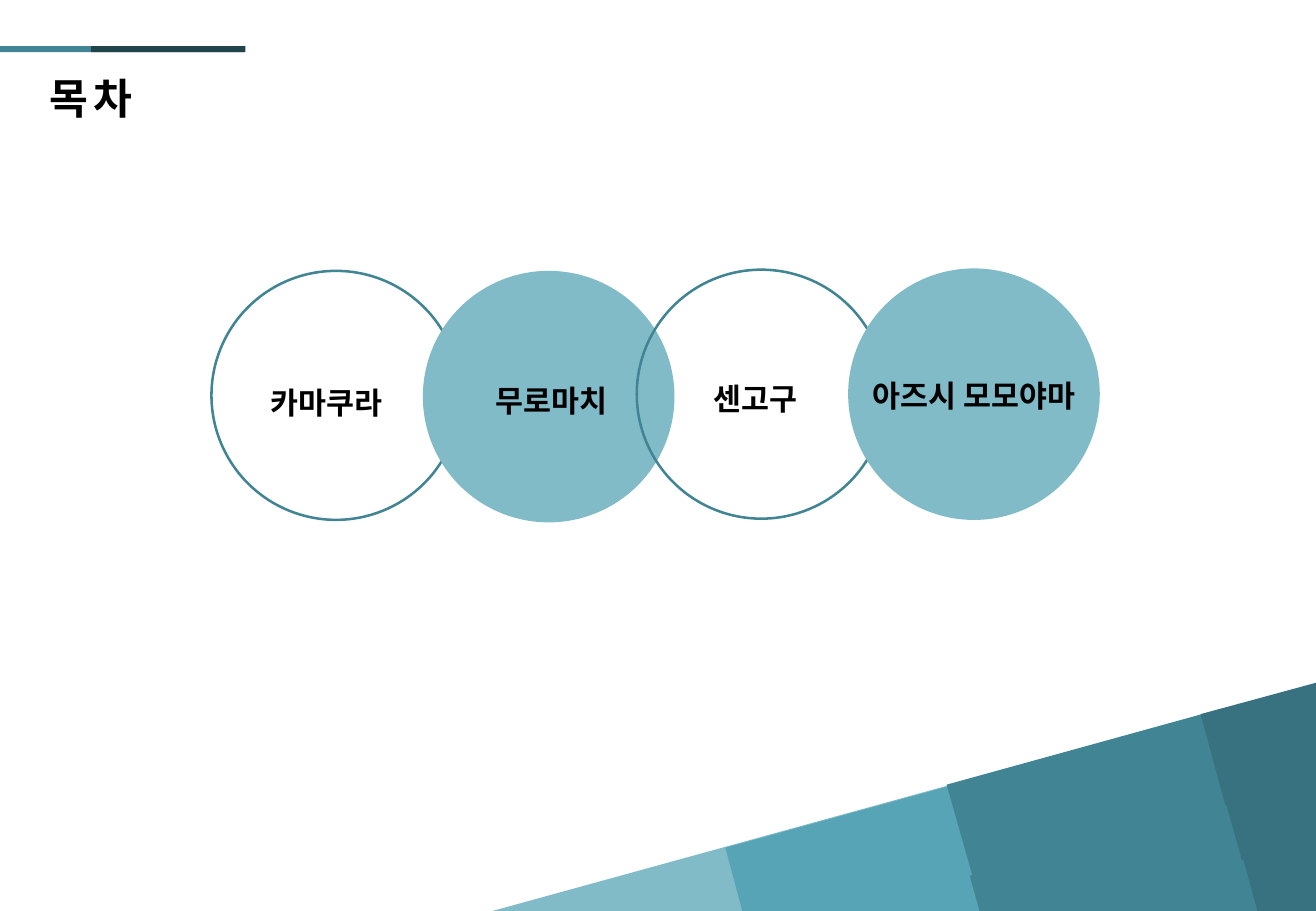
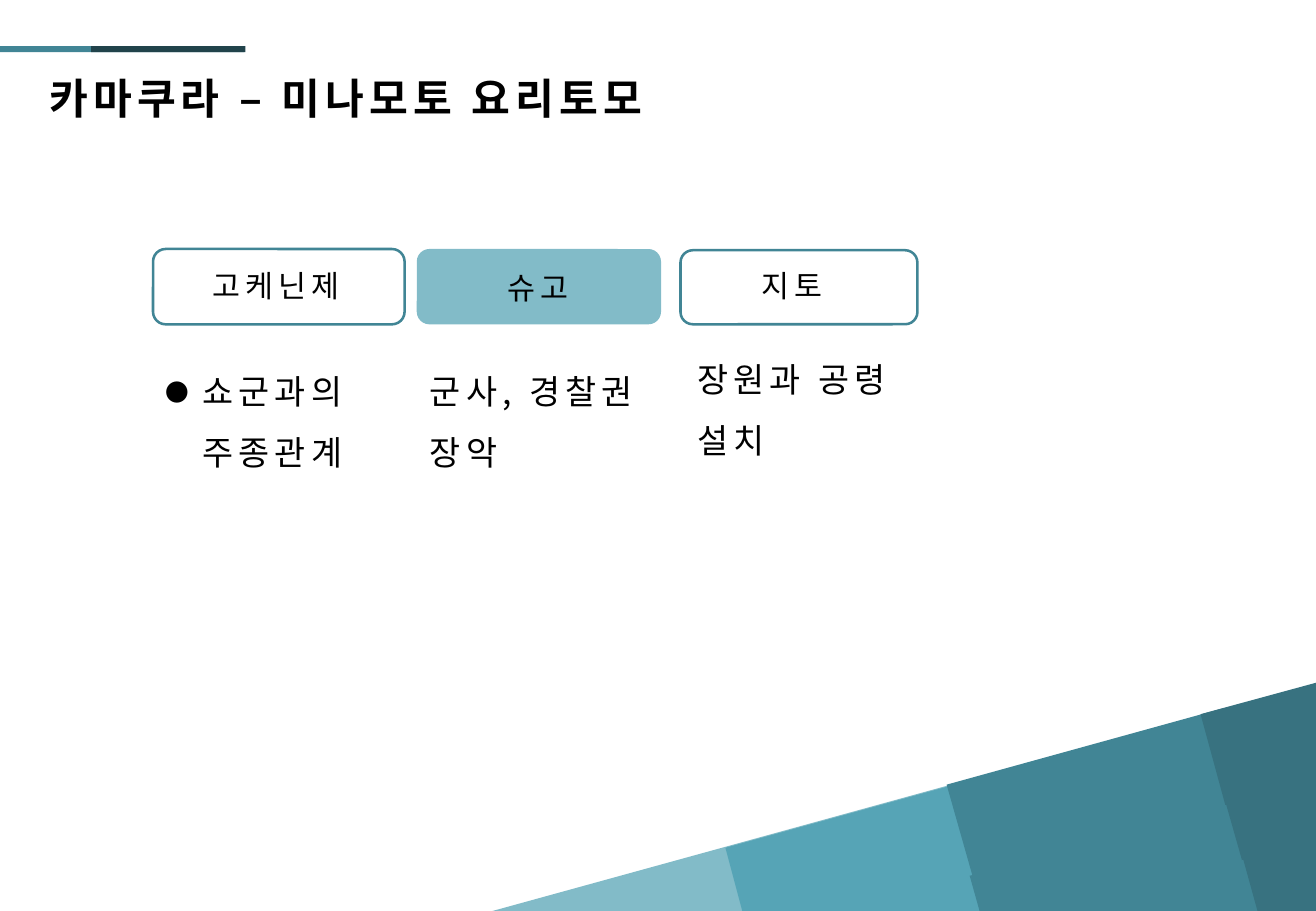
from dataclasses import dataclass

import lxml.etree
import pptx
import pptx.dml.color
import pptx.enum.shapes
import pptx.enum.text
import pptx.oxml.ns
import pptx.util

PX = 9144  # 100 px to the inch
PAGE_WIDTH, PAGE_HEIGHT = 1083, 750
FONT = "Noto Sans CJK KR"
COLORS = {
    "black": "000000",
    "light": "82BBC8",
    "medium": "56A4B6",
    "teal": "418595",
    "deep": "387280",
    "dark": "21434B",
}
SHAPES = pptx.enum.shapes.MSO_SHAPE
ALIGN = pptx.enum.text.PP_ALIGN


@dataclass(frozen=True)
class Box:
    left: int
    top: int
    width: int
    height: int

    def emu(self) -> list[int]:
        return [value * PX for value in (self.left, self.top, self.width, self.height)]


@dataclass(frozen=True)
class TextStyle:
    size: int
    bold: bool = False
    tracking: int = 0
    align: ALIGN = ALIGN.LEFT
    line_spacing: float = 1.0


@dataclass(frozen=True)
class Look:
    fill: str | None = None
    line: str | None = None


@dataclass(frozen=True)
class Label:
    text: str
    box: Box
    bullet: bool = False


@dataclass(frozen=True)
class Facet:
    color: str
    points: list[tuple[int, int]]


TITLE = TextStyle(25, bold=True, tracking=3)
ERA = TextStyle(18, bold=True, align=ALIGN.CENTER, line_spacing=1.5)
HEADING = TextStyle(18, tracking=3, align=ALIGN.CENTER)
BODY = TextStyle(20, tracking=3, line_spacing=1.5)

OUTLINED = Look(line="teal")
FILLED = Look(fill="light")
FILLED_WITH_EDGE = Look(fill="light", line="light")

FACETS = [
    Facet("light", [(808, 639), (818, 730), (732, 754), (399, 754), (398, 752)]),
    Facet("medium", [(1007, 585), (1017, 677), (723, 758), (613, 758), (597, 698)]),
    Facet("teal", [(1007, 583), (1017, 675), (804, 734), (779, 646)]),
    Facet("deep", [(1087, 561), (1087, 656), (1012, 676), (988, 588)]),
    Facet("medium", [(1029, 660), (1039, 752), (1021, 757), (678, 757)]),
    Facet("teal", [(1026, 658), (1036, 750), (1025, 753), (807, 753), (798, 721)]),
    Facet("deep", [(1086, 641), (1086, 736), (1034, 750), (1009, 662)]),
    Facet("teal", [(1041, 703), (1046, 753), (858, 753)]),
    Facet("deep", [(1086, 690), (1086, 754), (1036, 754), (1023, 707)]),
]

CIRCLE_SIZE, CIRCLE_LEFT, CIRCLE_STEP = 205, 174, 175
CIRCLES = [
    (223, OUTLINED),
    (224, FILLED_WITH_EDGE),
    (222, OUTLINED),
    (222, FILLED_WITH_EDGE),
]
ERAS = [
    Label("카마쿠라", Box(185, 296, 168, 50)),
    Label("무로마치", Box(370, 295, 168, 50)),
    Label("센고구", Box(538, 293, 168, 50)),
    Label("아즈시 모모야마", Box(694, 291, 215, 50)),
]

PANELS = [
    (Box(126, 205, 207, 62), OUTLINED),
    (Box(343, 205, 201, 62), FILLED),
    (Box(560, 206, 195, 61), OUTLINED),
]
HEADINGS = [
    Label("고케닌제", Box(147, 215, 160, 40)),
    Label("슈고", Box(362, 217, 161, 40)),
    Label("지토", Box(571, 215, 161, 40)),
]
DETAILS = [
    Label("쇼군과의\v주종관계", Box(126, 284, 212, 111), bullet=True),
    Label("군사, 경찰권 장악", Box(344, 284, 211, 111)),
    Label("장원과 공령 설치", Box(564, 274, 226, 111)),
]


def rgb(name: str) -> pptx.dml.color.RGBColor:
    return pptx.dml.color.RGBColor.from_string(COLORS[name])


def add_child(parent, tag: str, **attributes: str) -> None:
    lxml.etree.SubElement(parent, pptx.oxml.ns.qn(tag), attributes)


def apply_look(shape, look: Look) -> None:
    shape.shadow.inherit = False
    if look.fill:
        shape.fill.solid()
        shape.fill.fore_color.rgb = rgb(look.fill)
    else:
        shape.fill.background()
    if look.line:
        shape.line.color.rgb = rgb(look.line)
        shape.line.width = pptx.util.Pt(1.5)
    else:
        shape.line.fill.background()


def add_figure(page, kind: SHAPES, box: Box, look: Look) -> None:
    apply_look(page.shapes.add_shape(kind, *box.emu()), look)


def add_facet(page, facet: Facet) -> None:
    start, *others = facet.points
    builder = page.shapes.build_freeform(*start, scale=PX)
    builder.add_line_segments(others, close=True)
    apply_look(builder.convert_to_shape(), Look(fill=facet.color))


def add_bullet(para, indent: int) -> None:
    """Hang the paragraph on a round bullet smaller than its text."""
    properties = para._p.get_or_add_pPr()
    properties.set("marL", str(indent * PX))
    properties.set("indent", str(-indent * PX))
    add_child(properties, "a:buSzPct", val="70000")
    add_child(properties, "a:buFont", typeface=FONT)
    add_child(properties, "a:buChar", char="●")


def add_label(page, label: Label, style: TextStyle) -> None:
    frame = page.shapes.add_textbox(*label.box.emu()).text_frame
    frame.word_wrap = True
    frame.auto_size = pptx.enum.text.MSO_AUTO_SIZE.SHAPE_TO_FIT_TEXT
    para = frame.paragraphs[0]
    para.text = label.text
    para.alignment = style.align
    para.line_spacing = style.line_spacing
    if label.bullet:
        add_bullet(para, indent=31)
    font_format = {
        "name": FONT,
        "size": pptx.util.Pt(style.size),
        "bold": style.bold,
    }
    for span in para.runs:
        for name, value in font_format.items():
            setattr(span.font, name, value)
        span.font.color.rgb = rgb("black")
        properties = span._r.get_or_add_rPr()
        properties.set("spc", str(style.tracking * 100))
        add_child(properties, "a:ea", typeface=FONT)


def add_page(deck, title: str, title_width: int):
    """Add a blank page with the shared title, top bars and corner facets."""
    page = deck.slides.add_slide(deck.slide_layouts[6])
    add_label(page, Label(title, Box(31, 55, title_width, 52)), TITLE)
    add_figure(page, SHAPES.RECTANGLE, Box(0, 38, 201, 5), Look(fill="teal"))
    add_figure(page, SHAPES.RECTANGLE, Box(75, 38, 127, 5), Look(fill="dark"))
    for facet in FACETS:
        add_facet(page, facet)
    return page


def add_contents_page(deck) -> None:
    page = add_page(deck, "목차", 428)
    for index, (top, look) in enumerate(CIRCLES):
        left = CIRCLE_LEFT + index * CIRCLE_STEP
        add_figure(page, SHAPES.OVAL, Box(left, top, CIRCLE_SIZE, CIRCLE_SIZE), look)
    for label in ERAS:
        add_label(page, label, ERA)


def add_kamakura_page(deck) -> None:
    page = add_page(deck, "카마쿠라 – 미나모토 요리토모", 650)
    for box, look in PANELS:
        add_figure(page, SHAPES.ROUNDED_RECTANGLE, box, look)
    for labels, style in ((HEADINGS, HEADING), (DETAILS, BODY)):
        for label in labels:
            add_label(page, label, style)


def main() -> None:
    deck = pptx.Presentation()
    deck.slide_width = PAGE_WIDTH * PX
    deck.slide_height = PAGE_HEIGHT * PX
    add_contents_page(deck)
    add_kamakura_page(deck)
    deck.save("out.pptx")


if __name__ == "__main__":
    main()
